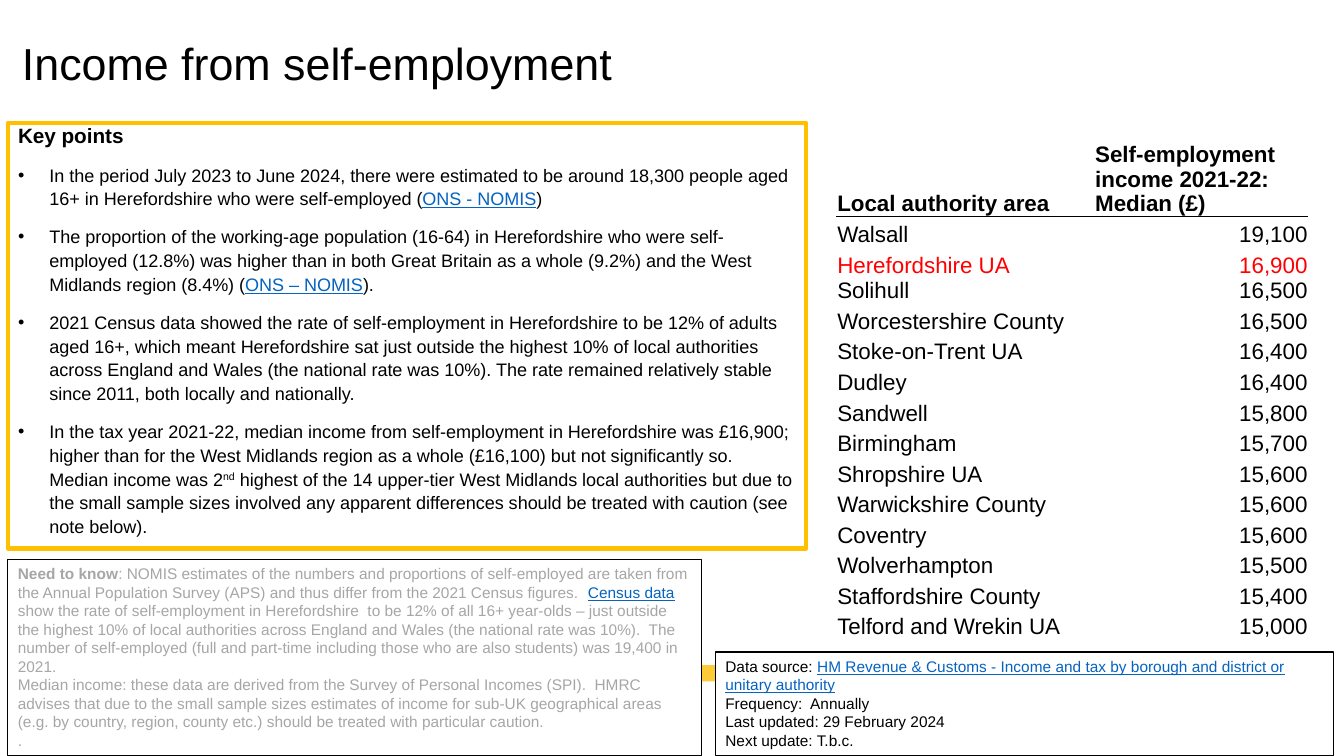
from lxml import etree
from pptx import Presentation, util as u
from pptx.dml.color import RGBColor
from pptx.enum import shapes, text
from pptx.oxml.ns import qn

BLACK, GREY, RED, BLUE = "000000", "A6A6A6", "FF0000", "0563C1"
WHITE, GOLD, AMBER = "FFFFFF", "FFC000", "FFCA38"
PLAIN_TABLE_STYLE = "{2D5ABB26-0587-4C30-8999-92F81FD0307C}"

# Each paragraph is a list of spans: plain text, or (text, style).
KEY_POINTS = [
    ["In the period July 2023 to June 2024, there were estimated to be around 18,300 people "
     "aged 16+ in Herefordshire who were self-employed (", ("ONS - NOMIS", "link"), ")"],
    ["The proportion of the working-age population (16-64) in Herefordshire who were "
     "self-employed (12.8%) was higher than in both Great Britain as a whole (9.2%) and the "
     "West Midlands region (8.4%) (", ("ONS – NOMIS", "link"), ")."],
    ["2021 Census data showed the rate of self-employment in Herefordshire to be 12% of adults "
     "aged 16+, which meant Herefordshire sat just outside the highest 10% of local authorities "
     "across England and Wales (the national rate was 10%). The rate remained relatively stable "
     "since 2011, both locally and nationally."],
    ["In the tax year 2021-22, median income from self-employment in Herefordshire was £16,900; "
     "higher than for the West Midlands region as a whole (£16,100) but not significantly so.  "
     "Median income was 2", ("nd", "superscript"),
     " highest of the 14 upper-tier West Midlands local authorities but due to the small sample "
     "sizes involved any apparent differences should be treated with caution (see note below)."],
]
NEED_TO_KNOW = [
    [("Need to know", "bold"),
     ": NOMIS estimates of the numbers and proportions of self-employed are taken from the "
     "Annual Population Survey (APS) and thus differ from the 2021 Census figures.  ",
     ("Census data", "link"),
     " show the rate of self-employment in Herefordshire  to be 12% of all 16+ year-olds – just "
     "outside the highest 10% of local authorities across England and Wales (the national rate "
     "was 10%).  The number of self-employed (full and part-time including those who are also "
     "students) was 19,400 in 2021."],
    ["Median income: these data are derived from the Survey of Personal Incomes (SPI).  HMRC "
     "advises that due to the small sample sizes estimates of income for sub-UK geographical "
     "areas (e.g. by country, region, county etc.) should be treated with particular caution."],
    ["."],
]
DATA_SOURCE = [
    ["Data source: ", ("HM Revenue & Customs - Income and tax by borough and district or "
                       "unitary authority", "link")],
    ["Frequency:  Annually"],
    ["Last updated: 29 February 2024"],
    ["Next update: T.b.c."],
]
INCOME_HEADINGS = ("Local authority area", "Self-employment income 2021-22: Median (£)")
MEDIAN_INCOME = [
    ("Walsall", 19100), ("Herefordshire UA", 16900), ("Solihull", 16500),
    ("Worcestershire County", 16500), ("Stoke-on-Trent UA", 16400), ("Dudley", 16400),
    ("Sandwell", 15800), ("Birmingham", 15700), ("Shropshire UA", 15600),
    ("Warwickshire County", 15600), ("Coventry", 15600), ("Wolverhampton", 15500),
    ("Staffordshire County", 15400), ("Telford and Wrekin UA", 15000),
]


def rgb(value):
    return RGBColor.from_string(value)


def place(shape, box):
    shape.left, shape.top, shape.width, shape.height = (u.Cm(length) for length in box)


def set_font(para, size, color=BLACK, bold=False):
    font = para.font
    font.name, font.size, font.bold = "Arial", u.Pt(size), bold
    font.color.rgb = rgb(color)


def add_spans(para, spans):
    for item in spans:
        words, style = (item, None) if isinstance(item, str) else item
        span = para.add_run()
        span.text = words
        if style == "link":
            span.font.underline = True
            span.font.color.rgb = rgb(BLUE)
        elif style == "bold":
            span.font.bold = True
        elif style == "superscript":
            span.font._element.set("baseline", "30000")


def add_bullet(para, indent):
    props = para._p.get_or_add_pPr()
    props.set("marL", str(indent))
    props.set("indent", str(-indent))
    etree.SubElement(props, qn("a:buFont")).set("typeface", "Arial")
    etree.SubElement(props, qn("a:buChar")).set("char", "•")


def remove_bullet(para):
    props = para._p.get_or_add_pPr()
    props.set("marL", "0")
    props.set("indent", "0")
    etree.SubElement(props, qn("a:buNone"))


def fill_title(title, box):
    place(title, box)
    frame = title.text_frame
    frame.auto_size = text.MSO_AUTO_SIZE.NONE
    frame.vertical_anchor = text.MSO_ANCHOR.BOTTOM
    para = frame.paragraphs[0]
    para.alignment, para.line_spacing = text.PP_ALIGN.LEFT, 0.9
    add_spans(para, ["Income from self-employment"])
    set_font(para, 32)


def fill_key_points(body, box):
    place(body, box)
    body.line.color.rgb = rgb(GOLD)
    body.line.width = u.Pt(3)
    frame = body.text_frame
    frame.auto_size = text.MSO_AUTO_SIZE.NONE
    heading = frame.paragraphs[0]
    remove_bullet(heading)
    heading.line_spacing, heading.space_before = 0.8, u.Pt(0)
    add_spans(heading, ["Key points"])
    set_font(heading, 14.8, bold=True)
    for point in KEY_POINTS:
        para = frame.add_paragraph()
        add_bullet(para, u.Cm(0.79))
        para.line_spacing, para.space_before = 1.1, u.Pt(10)
        add_spans(para, point)
        set_font(para, 12.9)


def add_rectangle(page, box, fill):
    shape = page.shapes.add_shape(shapes.MSO_SHAPE.RECTANGLE, *(u.Cm(length) for length in box))
    shape.shadow.inherit = False
    shape.fill.solid()
    shape.fill.fore_color.rgb = rgb(fill)
    shape.line.fill.background()
    return shape


def add_note(page, box, paragraphs, color):
    note = add_rectangle(page, box, WHITE)
    note.line.color.rgb = rgb(BLACK)
    note.line.width = u.Pt(0.75)
    frame = note.text_frame
    frame.word_wrap = True
    frame.auto_size = text.MSO_AUTO_SIZE.SHAPE_TO_FIT_TEXT
    frame.vertical_anchor = text.MSO_ANCHOR.TOP
    for number, spans in enumerate(paragraphs):
        para = frame.add_paragraph() if number else frame.paragraphs[0]
        para.alignment = text.PP_ALIGN.LEFT
        add_spans(para, spans)
        set_font(para, 11, color)


def underline_cell(cell):
    border = etree.Element(qn("a:lnB"), w=str(u.Pt(0.5)))
    fill = etree.SubElement(border, qn("a:solidFill"))
    etree.SubElement(fill, qn("a:srgbClr")).set("val", BLACK)
    cell._tc.get_or_add_tcPr().insert(0, border)


def add_income_table(page, box):
    rows = [INCOME_HEADINGS] + [(area, f"{income:,}") for area, income in MEDIAN_INCOME]
    frame = page.shapes.add_table(len(rows), 2, *(u.Cm(length) for length in box))
    table = frame.table
    table.horz_banding = False
    table._tbl.tblPr.find(qn("a:tableStyleId")).text = PLAIN_TABLE_STYLE
    for column, width in zip(table.columns, (6.5, box[2] - 6.5)):
        column.width = u.Cm(width)
    for r, values in enumerate(rows):
        table.rows[r].height = u.Cm({0: 2.31, 3: 0.64}.get(r, 0.77))
        for c, value in enumerate(values):
            cell = table.cell(r, c)
            cell.fill.background()
            cell.vertical_anchor = text.MSO_ANCHOR.BOTTOM
            cell.margin_left = cell.margin_right = cell.margin_top = u.Cm(0.02)
            cell.margin_bottom = 0
            para = cell.text_frame.paragraphs[0]
            para.alignment = text.PP_ALIGN.RIGHT if r and c else text.PP_ALIGN.LEFT
            add_spans(para, [value])
            set_font(para, 16, RED if values[0] == "Herefordshire UA" else BLACK, bold=r == 0)
            if r == 0:
                underline_cell(cell)


def build_income_slide(deck):
    page = deck.slides.add_slide(deck.slide_layouts[1])
    fill_title(page.shapes.title, (0.3, 0.18, 21.06, 2.23))
    fill_key_points(page.placeholders[1], (0.2, 3.1, 20.12, 10.72))
    add_rectangle(page, (0.79, 16.76, 32, 0.41), AMBER)
    add_income_table(page, (21.08, 3.15, 11.89, 12.98))
    add_note(page, (18.03, 16.43, 15.57, 2.62), DATA_SOURCE, BLACK)
    add_note(page, (0.2, 14.1, 17.48, 4.95), NEED_TO_KNOW, GREY)


def main():
    deck = Presentation()
    deck.slide_width, deck.slide_height = u.Cm(33.87), u.Cm(19.05)
    build_income_slide(deck)
    deck.save("out.pptx")


if __name__ == "__main__":
    main()
